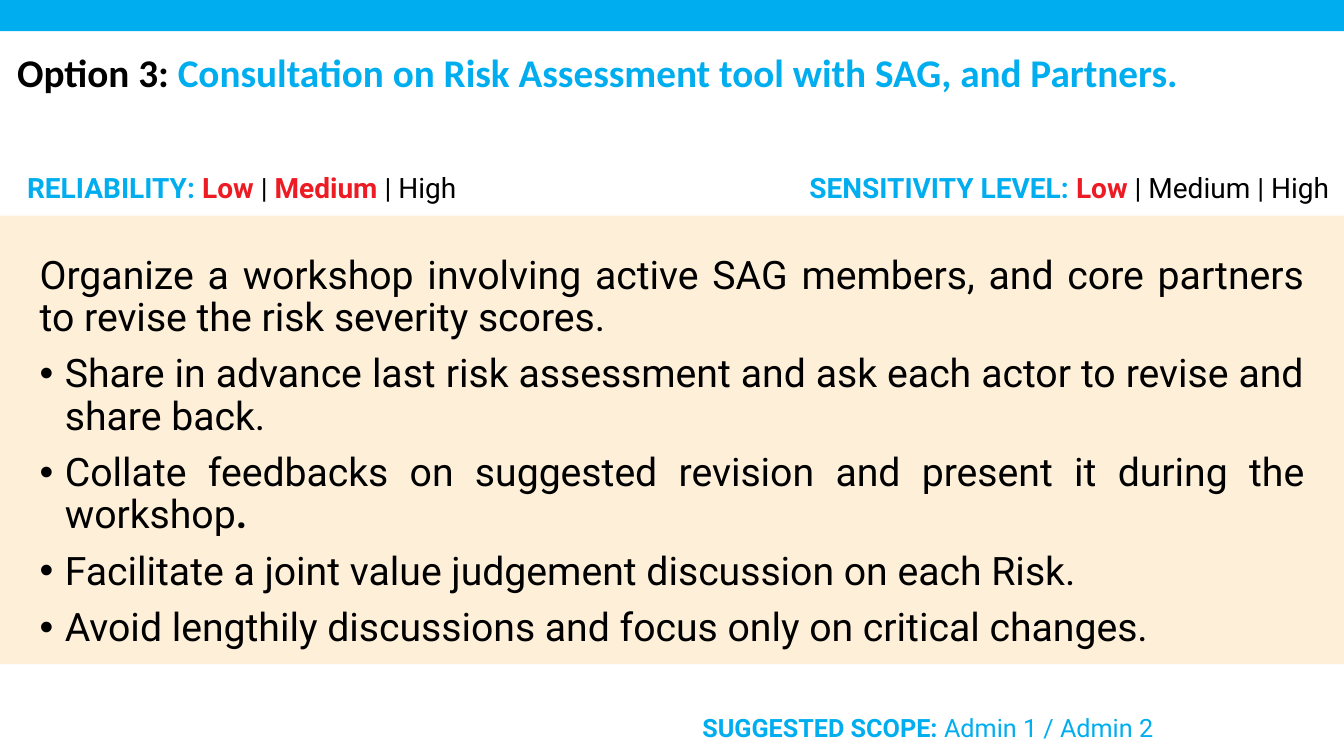
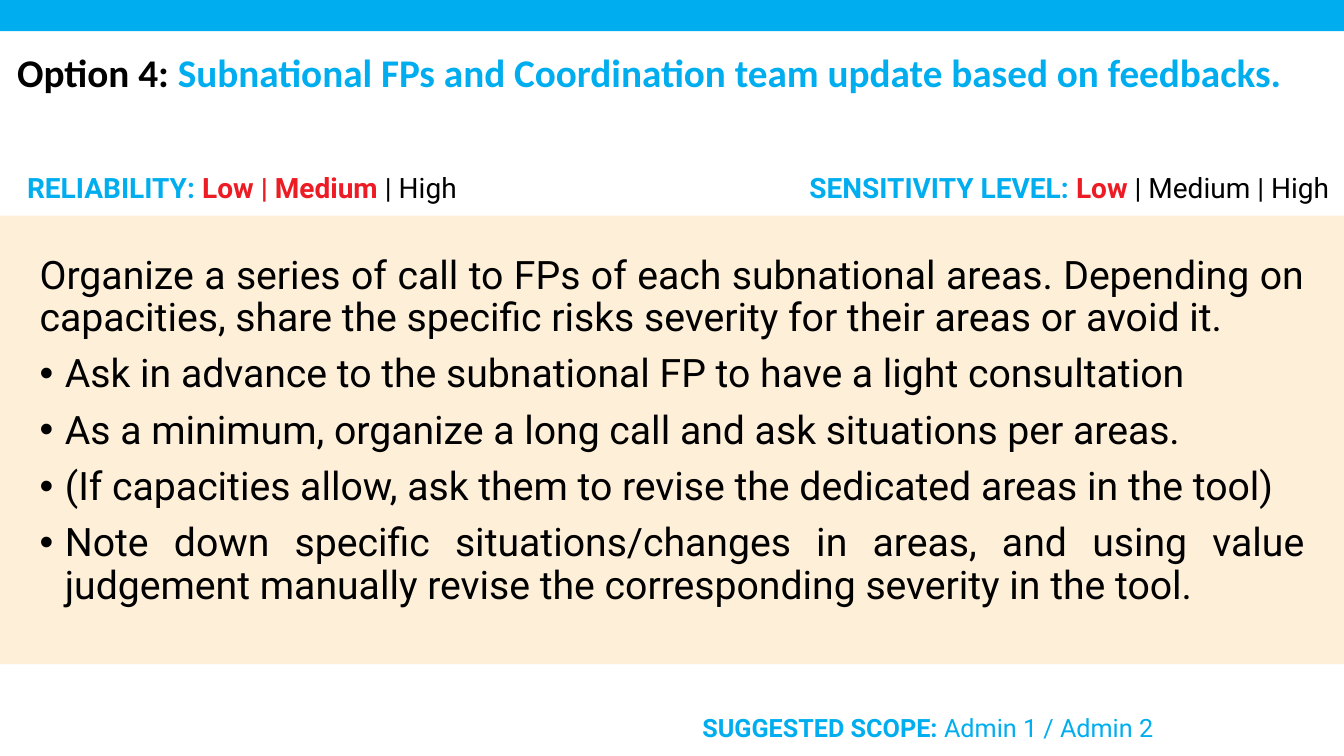
"""Build two slides that describe consultation options."""
from lxml import etree
from pptx import Presentation
from pptx.dml.color import RGBColor
from pptx.enum.shapes import MSO_SHAPE
from pptx.enum.text import MSO_ANCHOR, MSO_AUTO_SIZE, PP_ALIGN
from pptx.oxml.ns import qn
from pptx.util import Pt

BLUE = RGBColor(0x00, 0xAE, 0xEF)
RED = RGBColor(0xED, 0x1C, 0x24)
CREAM = RGBColor(0xFE, 0xEF, 0xD9)
BLACK = RGBColor(0x00, 0x00, 0x00)
RECT = MSO_SHAPE.RECTANGLE
TOP, MIDDLE = MSO_ANCHOR.TOP, MSO_ANCHOR.MIDDLE
NO_FIT = MSO_AUTO_SIZE.NONE
LEFT, RIGHT, JUSTIFY = PP_ALIGN.LEFT, PP_ALIGN.RIGHT, PP_ALIGN.JUSTIFY

WIDTH, HEIGHT = 960, 540
HEADING, HEADING_FONT, TEXT_FONT = 28, "Calibri", "Roboto"
LABEL, FOOTER = 20, 18
INSETS = (7.2, 3.6, 7.2, 3.6)
INDENT = 18

SENSITIVITY = [("Low", RED, True), (" | Medium | High", BLACK, False)]
SCOPE = [("Admin 1 / Admin 2", BLUE, False)]

SLIDES = [
    {
        "option": "Option 3: ",
        "title": "Consultation on Risk Assessment tool with SAG, and Partners.",
        "reliability": [("Low", RED, True), (" | ", BLACK, False),
                        ("Medium", RED, True), (" | High", BLACK, False)],
        "intro": "Organize a workshop involving active SAG members, and core "
                 "partners to revise the risk severity scores.",
        "bullets": [
            [("Share in advance last risk assessment and ask each actor to "
              "revise and share back.", BLACK, False)],
            [("Collate feedbacks on suggested revision and present it during "
              "the workshop", BLACK, False), (".", BLACK, True)],
            [("Facilitate a joint value judgement discussion on each Risk.",
              BLACK, False)],
            [("Avoid lengthily discussions and focus only on critical changes.",
              BLACK, False)],
        ],
    },
    {
        "option": "Option 4: ",
        "title": "Subnational FPs and Coordination team update based on feedbacks.",
        "reliability": [("Low | Medium ", RED, True), ("| High", BLACK, False)],
        "intro": "Organize a series of call to FPs of each subnational areas. "
                 "Depending on capacities, share the specific risks severity for "
                 "their areas or avoid it.",
        "bullets": [
            [("Ask in advance to the subnational FP to have a light consultation",
              BLACK, False)],
            [("As a minimum, organize a long call and ask situations per areas.",
              BLACK, False)],
            [("(If capacities allow, ask them to revise the dedicated areas in "
              "the tool)", BLACK, False)],
            [("Note down specific situations/changes in areas, and using value "
              "judgement manually revise the corresponding severity in the tool.",
              BLACK, False)],
        ],
    },
]


def apply(obj, values):
    """Set each attribute of an object from a dict."""
    for name, value in values.items():
        setattr(obj, name, value)


class Deck:
    """Hold the presentation, its style and the current slide."""

    def __init__(self):
        """Start an empty widescreen presentation."""
        self.prs = Presentation()
        apply(self.prs, {"slide_width": Pt(WIDTH), "slide_height": Pt(HEIGHT)})
        self.s = None

    def add_slide(self):
        """Start a slide with a title placeholder."""
        self.s = self.prs.slides.add_slide(self.prs.slide_layouts[5])

    def frame(self, sp, insets=INSETS, anchor=TOP):
        """Format the text frame of a shape."""
        tf = sp.text_frame
        left, top, right, bottom = map(Pt, insets)
        apply(tf, {"word_wrap": True, "auto_size": NO_FIT,
                   "vertical_anchor": anchor, "margin_left": left,
                   "margin_top": top, "margin_right": right,
                   "margin_bottom": bottom})
        return tf

    def runs(self, p, runs, size, font=TEXT_FONT, align=LEFT):
        """Fill a paragraph with coloured runs."""
        p.alignment = align
        for text, color, bold in runs:
            r = p.add_run()
            r.text = text
            apply(r.font, {"size": Pt(size), "name": font, "bold": bold})
            r.font.color.rgb = color

    def bullet(self, p):
        """Give a paragraph a hanging bullet."""
        pPr = p._p.get_or_add_pPr()
        pPr.set("marL", str(Pt(INDENT)))
        pPr.set("indent", str(-Pt(INDENT)))
        etree.SubElement(pPr, qn("a:buFont")).set("typeface", "Arial")
        etree.SubElement(pPr, qn("a:buChar")).set("char", "•")

    def title(self, option, text):
        """Place the option number and its title."""
        sp = self.s.shapes.title
        apply(sp, {"left": Pt(12.24), "top": Pt(31), "width": Pt(921),
                   "height": Pt(41)})
        tf = self.frame(sp, (0, 3.6, 7.2, 3.6), MIDDLE)
        self.runs(tf.paragraphs[0],
                  [(option, BLACK, True), (text, BLUE, True)],
                  HEADING, HEADING_FONT)

    def band(self, top, height, color):
        """Draw a full-width rectangle."""
        sp = self.s.shapes.add_shape(RECT, 0, Pt(top), Pt(WIDTH), Pt(height))
        sp.shadow.inherit = False
        sp.fill.solid()
        sp.fill.fore_color.rgb = color
        sp.line.fill.background()
        return sp

    def body(self, intro, bullets):
        """Draw the cream panel with an introduction and bullets."""
        sp = self.band(154, 320.4, CREAM)
        tf = self.frame(sp, (28.35, 28.35, 28.35, 3.6))
        for i, runs in enumerate([[(intro, BLACK, False)]] + bullets):
            p = tf.add_paragraph() if i else tf.paragraphs[0]
            if i:
                p.space_before = Pt(10)
            p.line_spacing = 0.9
            if i:
                self.bullet(p)
            self.runs(p, runs, HEADING, align=JUSTIFY)

    def label(self, box, name, runs, size=LABEL, align=LEFT):
        """Place a bold blue label followed by its values."""
        tf = self.frame(self.s.shapes.add_textbox(*map(Pt, box)))
        self.runs(tf.paragraphs[0], [(name, BLUE, True)] + runs, size,
                  align=align)


def main():
    """Build and save the presentation."""
    deck = Deck()
    for content in SLIDES:
        deck.add_slide()
        deck.body(content["intro"], content["bullets"])
        deck.band(0, 22.3, BLUE)
        deck.title(content["option"], content["title"])
        deck.label((12.24, 118, 333, 31.5), "RELIABILITY: ",
                   content["reliability"])
        deck.label((571, 118, 389, 31.5), "SENSITIVITY LEVEL: ", SENSITIVITY)
        deck.label((472.3, 505.4, 358.6, 29), "SUGGESTED SCOPE: ", SCOPE,
                   FOOTER, RIGHT)
    deck.prs.save("out.pptx")


if __name__ == "__main__":
    main()
